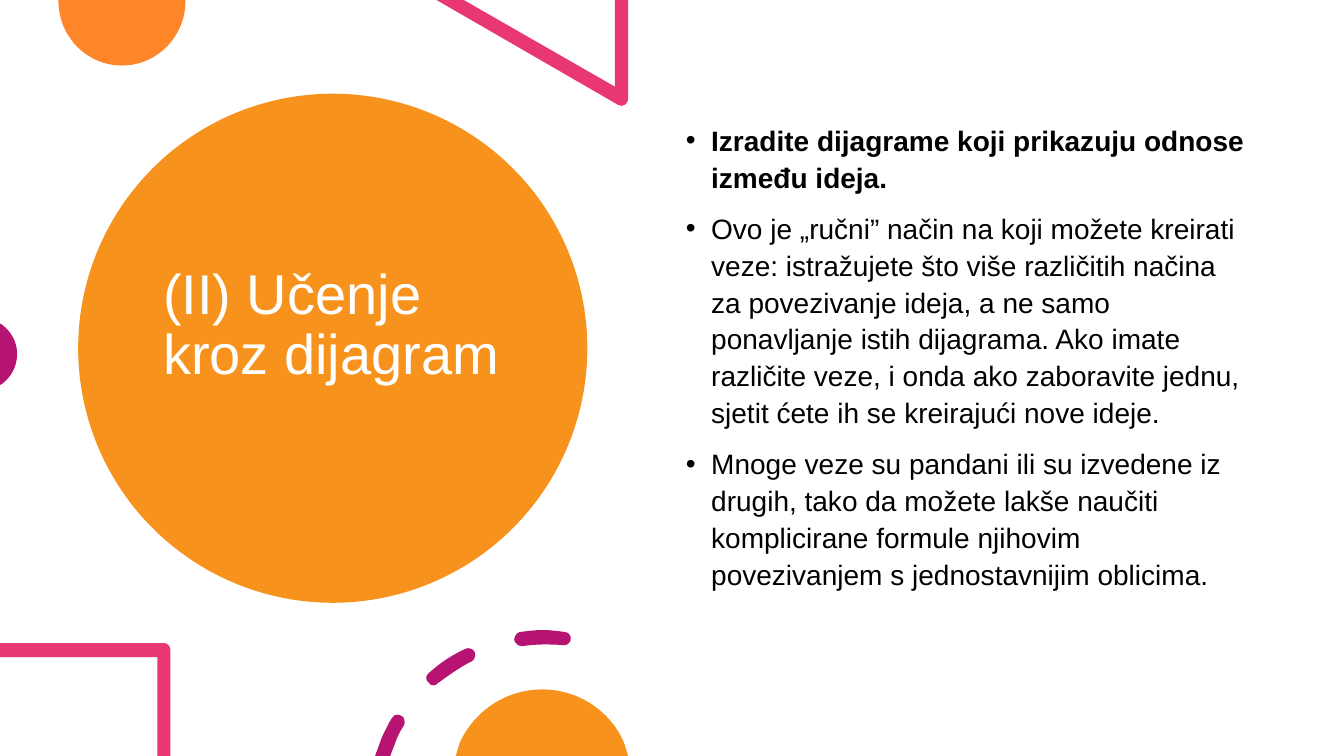
from dataclasses import dataclass

from lxml.etree import SubElement
from pptx import Presentation
from pptx.dml.color import RGBColor
from pptx.enum.shapes import MSO_SHAPE
from pptx.enum.text import MSO_ANCHOR, PP_ALIGN
from pptx.oxml.ns import qn
from pptx.util import Inches, Pt

# The slide is a grid of 1333 columns by 750 rows.
COLUMNS, ROWS = 1333, 750
CELL = Inches(0.01)

ORANGE, BRIGHT_ORANGE = "F7921D", "FF8529"
PINK, PURPLE = "E83773", "B71373"
WHITE, BLACK = "FFFFFF", "000000"

Contour = list[tuple[int, ...]]


@dataclass
class Decoration:
    """Contours whose segments hold one point for a line, three for a curve."""
    color: str
    contours: list[Contour]


@dataclass
class Area:
    column: float
    row: float
    columns: float
    rows: float

    def lengths(self) -> list[int]:
        return [cells(n) for n in (self.column, self.row, self.columns, self.rows)]


@dataclass
class Bullet:
    text: str
    bold: bool = False


CIRCLE = Area(77.5, 93, 505, 505)
TITLE = Area(152, 135, 354, 445)
BODY = Area(670.5, 114, 575, 535)

TOP_DISC = Decoration(BRIGHT_ORANGE, [
    [(184, 0), (58, 0), (58, 1), (58, 36, 86, 65, 121, 65), (156, 65, 184, 36, 184, 1)],
])
TRIANGLE = Decoration(PINK, [
    [(623, 0), (610, 0), (610, 86), (460, 0), (433, 0), (613, 104),
     (614, 105, 615, 105, 616, 105), (620, 105, 623, 102, 623, 98)],
])
LEFT_DISC = Decoration(PURPLE, [
    [(0, 321), (0, 382), (2, 381), (11, 374, 17, 364, 17, 351), (17, 339, 11, 329, 2, 322)],
])
SQUARE = Decoration(PINK, [
    [(163, 638), (0, 638), (0, 652), (156, 652), (156, 750), (169, 750), (169, 645),
     (169, 641, 166, 638, 163, 638)],
])
DASHED_RING = Decoration(PURPLE, [
    [(395, 709), (393, 708, 390, 710, 389, 712), (385, 718, 382, 725, 379, 731),
     (372, 750), (387, 750), (392, 737), (394, 731, 397, 725, 401, 719),
     (402, 716, 401, 711, 398, 710), (397, 709, 396, 709, 395, 709)],
    [(464, 643), (463, 643, 462, 643, 461, 644), (448, 650, 436, 658, 425, 668),
     (422, 670, 422, 675, 425, 677), (426, 679, 428, 680, 430, 680),
     (432, 680, 433, 679, 434, 678), (445, 670, 456, 662, 468, 656),
     (471, 654, 472, 650, 471, 647), (469, 644, 467, 643, 464, 643)],
    [(538, 625), (531, 625, 524, 626, 516, 627), (513, 627, 510, 631, 510, 635),
     (511, 638, 514, 641, 517, 641), (518, 641, 518, 641, 518, 641),
     (532, 639, 545, 639, 558, 640), (562, 641, 565, 638, 566, 635),
     (567, 631, 564, 627, 560, 627), (553, 626, 545, 625, 538, 625)],
])
BOTTOM_DISC = Decoration(ORANGE, [
    [(538, 684), (501, 684, 470, 706, 456, 737), (452, 750), (623, 750), (619, 737),
     (606, 706, 574, 684, 538, 684)],
])

BULLETS = [
    Bullet("Izradite dijagrame koji prikazuju odnose između ideja.", bold=True),
    Bullet("Ovo je „ručni” način na koji možete kreirati veze: istražujete što više "
           "različitih načina za povezivanje ideja, a ne samo ponavljanje istih "
           "dijagrama. Ako imate različite veze, i onda ako zaboravite jednu, sjetit "
           "ćete ih se kreirajući nove ideje."),
    Bullet("Mnoge veze su pandani ili su izvedene iz drugih, tako da možete lakše "
           "naučiti komplicirane formule njihovim povezivanjem s jednostavnijim "
           "oblicima."),
]


def cells(count: float) -> int:
    return round(count * CELL)


def set_values(target, **values) -> None:
    for name, value in values.items():
        setattr(target, name, value)


def rgb(color: str) -> RGBColor:
    return RGBColor.from_string(color)


def paint(shape, color: str) -> None:
    shape.shadow.inherit = False
    shape.fill.solid()
    shape.fill.fore_color.rgb = rgb(color)
    shape.line.fill.background()


def bend(shape, contours: list[Contour]) -> None:
    """Give the curved segments of a straight-sided outline their control points."""
    left, top = round(shape.left / CELL), round(shape.top / CELL)
    segments = [segment for contour in contours for segment in contour[1:]]
    lines = list(shape._element.iter(qn("a:lnTo")))
    for line, segment in zip(lines, segments):
        if len(segment) == 2:
            continue
        line.tag = qn("a:cubicBezTo")
        line.clear()
        for x, y in zip(segment[::2], segment[1::2]):
            point = SubElement(line, qn("a:pt"))
            point.set("x", str(x - left))
            point.set("y", str(y - top))


def draw_decoration(slide, decoration: Decoration) -> None:
    outlines = [[segment[-2:] for segment in contour] for contour in decoration.contours]
    builder = slide.shapes.build_freeform(*outlines[0][0], scale=float(CELL))
    for index, (start, *corners) in enumerate(outlines):
        if index:
            builder.move_to(*start)
        builder.add_line_segments(corners, close=True)
    shape = builder.convert_to_shape()
    bend(shape, decoration.contours)
    paint(shape, decoration.color)


def add_text_frame(slide, area: Area, anchor: MSO_ANCHOR):
    frame = slide.shapes.add_textbox(*area.lengths()).text_frame
    set_values(frame, word_wrap=True, vertical_anchor=anchor)
    return frame


def write(paragraph, text: str, size: int, color: str, bold: bool = False) -> None:
    paragraph.alignment = PP_ALIGN.LEFT
    run = paragraph.add_run()
    run.text = text
    set_values(run.font, name="Arial", size=Pt(size), bold=bold)
    run.font.color.rgb = rgb(color)


def draw_title(slide) -> None:
    frame = add_text_frame(slide, TITLE, MSO_ANCHOR.MIDDLE)
    frame.margin_bottom = cells(72)
    paragraph = frame.paragraphs[0]
    paragraph.line_spacing = 0.9
    write(paragraph, "(II) Učenje kroz dijagram", 40, WHITE)


def draw_bullets(slide) -> None:
    frame = add_text_frame(slide, BODY, MSO_ANCHOR.TOP)
    for index, bullet in enumerate(BULLETS):
        paragraph = frame.add_paragraph() if index else frame.paragraphs[0]
        set_values(paragraph, line_spacing=1.1, space_before=Pt(10 if index else 0))
        properties = paragraph._p.get_or_add_pPr()
        properties.set("marL", str(cells(25)))
        properties.set("indent", str(cells(-25)))
        SubElement(properties, qn("a:buFont")).set("typeface", "Arial")
        SubElement(properties, qn("a:buChar")).set("char", "•")
        write(paragraph, bullet.text, 20, BLACK, bullet.bold)


def main() -> None:
    presentation = Presentation()
    set_values(presentation, slide_width=cells(COLUMNS), slide_height=cells(ROWS))
    slide = presentation.slides.add_slide(presentation.slide_layouts[6])
    paint(slide.shapes.add_shape(MSO_SHAPE.OVAL, *CIRCLE.lengths()), ORANGE)
    draw_title(slide)
    for decoration in (TOP_DISC, TRIANGLE, LEFT_DISC):
        draw_decoration(slide, decoration)
    draw_bullets(slide)
    for decoration in (SQUARE, DASHED_RING, BOTTOM_DISC):
        draw_decoration(slide, decoration)
    presentation.save("out.pptx")


if __name__ == "__main__":
    main()
